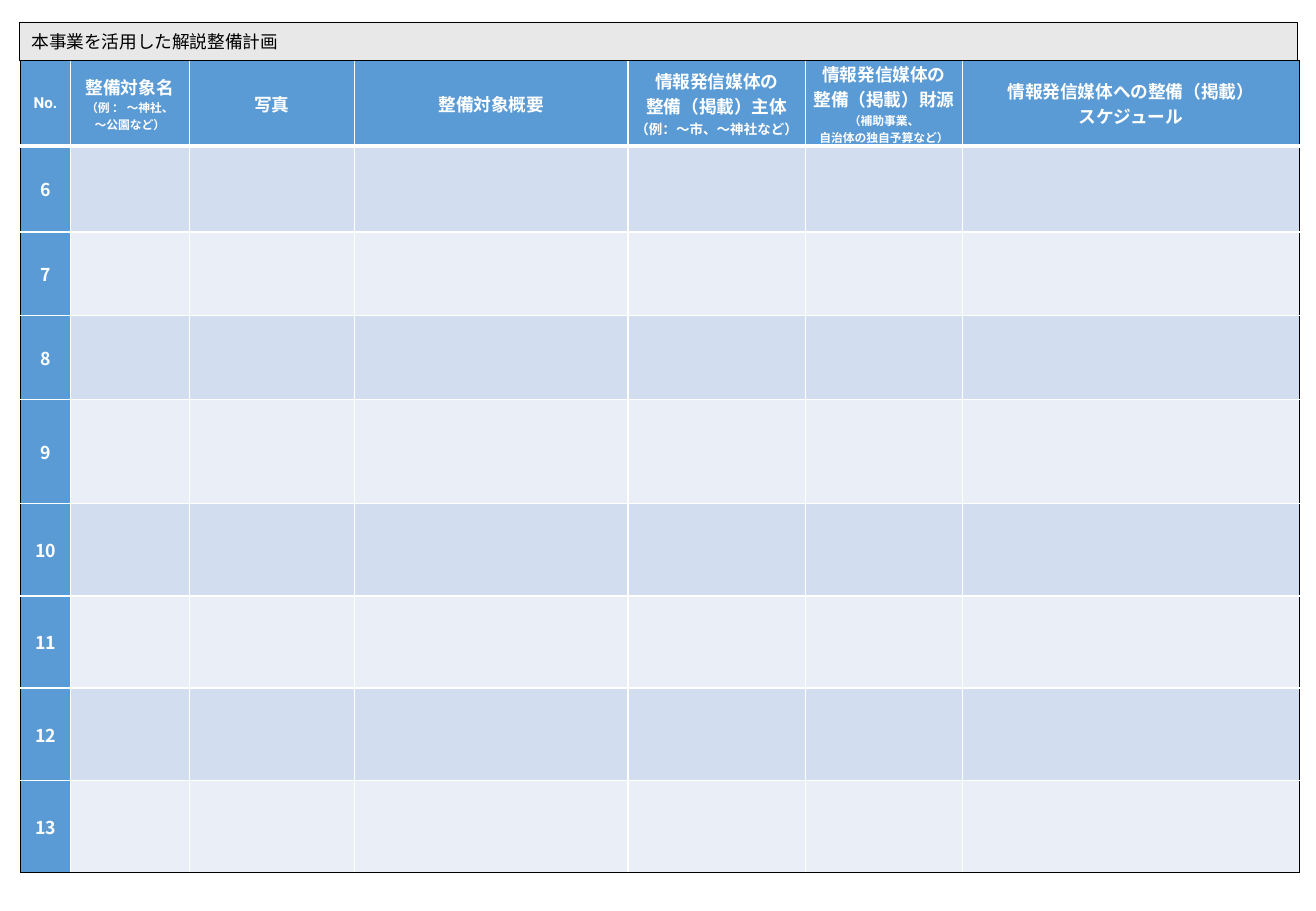
from lxml import etree
from pptx import Presentation
from pptx.dml.color import RGBColor
from pptx.enum import shapes, text
from pptx.oxml.ns import qn
from pptx.util import Cm, Pt

# Content: each head is a list of paragraphs, each paragraph a list of (line, size)
TITLE = "本事業を活用した解説整備計画"
HEADS = [
    [[("No.", 9)]],
    [[("整備対象名", 10.5), ("（例 ： ～神社、", 7)], [("～公園など）", 7)]],
    [[("写真", 10.5)]],
    [[("整備対象概要", 10.5)]],
    [[("情報発信媒体の", 10.5)],
     [("整備（掲載）主体", 10.5), ("（例：～市、～神社など）", 8)]],
    [[("情報発信媒体の", 10.5)],
     [("整備（掲載）財源", 10.5), ("（補助事業、", 7)],
     [("自治体の独自予算など）", 7)]],
    [[("情報発信媒体への整備（掲載）", 10.5)], [("スケジュール", 10.5)]],
]
NUMS = range(6, 14)

# Format
WIDTHS = [1.04, 2.49, 3.45, 5.72, 3.71, 3.28, 7.04]
HEIGHTS = [1.63, 1.8, 1.75, 1.75, 2.18] + [1.93] * 4
BLUE, BANDS = "5B9BD5", ("EAEFF7", "D2DEEF")
WHITE, BLACK, GREY = "FFFFFF", "000000", "E8E8E8"
LATIN, ASIAN = "Roboto", "Noto Sans CJK JP"
EDGE, GRID, RULE = (BLACK, 0.5), (WHITE, 1), (WHITE, 3)


def color(code):
    return RGBColor.from_string(code)


def paint(part, code):
    part.fill.solid()
    part.fill.fore_color.rgb = color(code)


def add_run(para, line, size, face, code, bold):
    run = para.add_run()
    run.text = line
    for key, val in {"size": Pt(size), "name": face, "bold": bold}.items():
        setattr(run.font, key, val)
    run.font.color.rgb = color(code)
    etree.SubElement(run.font._element, qn("a:ea"), typeface=ASIAN)


def write(cell, paras):
    frame = cell.text_frame
    for i, lines in enumerate(paras):
        para = frame.add_paragraph() if i else frame.paragraphs[0]
        para.alignment = text.PP_ALIGN.CENTER
        for j, (line, size) in enumerate(lines):
            if j:
                para.add_line_break()
                etree.SubElement(para._p[-1], qn("a:rPr"),
                                 sz=str(int(lines[j - 1][1] * 100)))
            face = LATIN if line == "No." else ASIAN
            add_run(para, line, size, face, WHITE, True)


def border(cell, sides):
    props = cell._tc.get_or_add_tcPr()
    for side, (code, width) in sides.items():
        line = etree.SubElement(props, qn("a:ln" + side), w=str(Pt(width)))
        fill = etree.SubElement(line, qn("a:solidFill"))
        etree.SubElement(fill, qn("a:srgbClr"), val=code)


prs = Presentation()
prs.slide_width, prs.slide_height = Cm(27.51), Cm(19.05)
slide = prs.slides.add_slide(prs.slide_layouts[6])

# Table
rows, cols = len(HEIGHTS), len(WIDTHS)
table = slide.shapes.add_table(rows, cols, Cm(0.43), Cm(1.27),
                               Cm(sum(WIDTHS)), Cm(sum(HEIGHTS))).table
table.horz_banding = False
for col, width in zip(table.columns, WIDTHS):
    col.width = Cm(width)
for row, height in zip(table.rows, HEIGHTS):
    row.height = Cm(height)

labels = [[[(str(num), 10.5)]] for num in NUMS]
for r in range(rows):
    for c in range(cols):
        cell = table.cell(r, c)
        border(cell, {
            "L": EDGE if c == 0 else GRID,
            "R": EDGE if c == cols - 1 else GRID,
            "T": EDGE if r == 0 else RULE if r == 1 else GRID,
            "B": RULE if r == 0 else EDGE if r == rows - 1 else GRID,
        })
        paint(cell, BLUE if r == 0 or c == 0 else BANDS[r % 2])
        cell.vertical_anchor = text.MSO_ANCHOR.MIDDLE
        if r == 0:
            for side in ("left", "right", "top", "bottom"):
                setattr(cell, "margin_" + side, 0)
            write(cell, HEADS[c])
        elif c == 0:
            write(cell, labels[r - 1])

# Title bar
bar = slide.shapes.add_shape(shapes.MSO_SHAPE.RECTANGLE, Cm(0.41), Cm(0.46),
                             Cm(26.7), Cm(0.81))
bar.shadow.inherit = False
paint(bar, GREY)
bar.line.color.rgb = color(BLACK)
bar.line.width = Pt(0.25)
bar.text_frame.word_wrap = True
bar.text_frame.vertical_anchor = text.MSO_ANCHOR.MIDDLE
head = bar.text_frame.paragraphs[0]
head.alignment = text.PP_ALIGN.LEFT
add_run(head, TITLE, 10.5, LATIN, BLACK, False)

prs.save("out.pptx")
